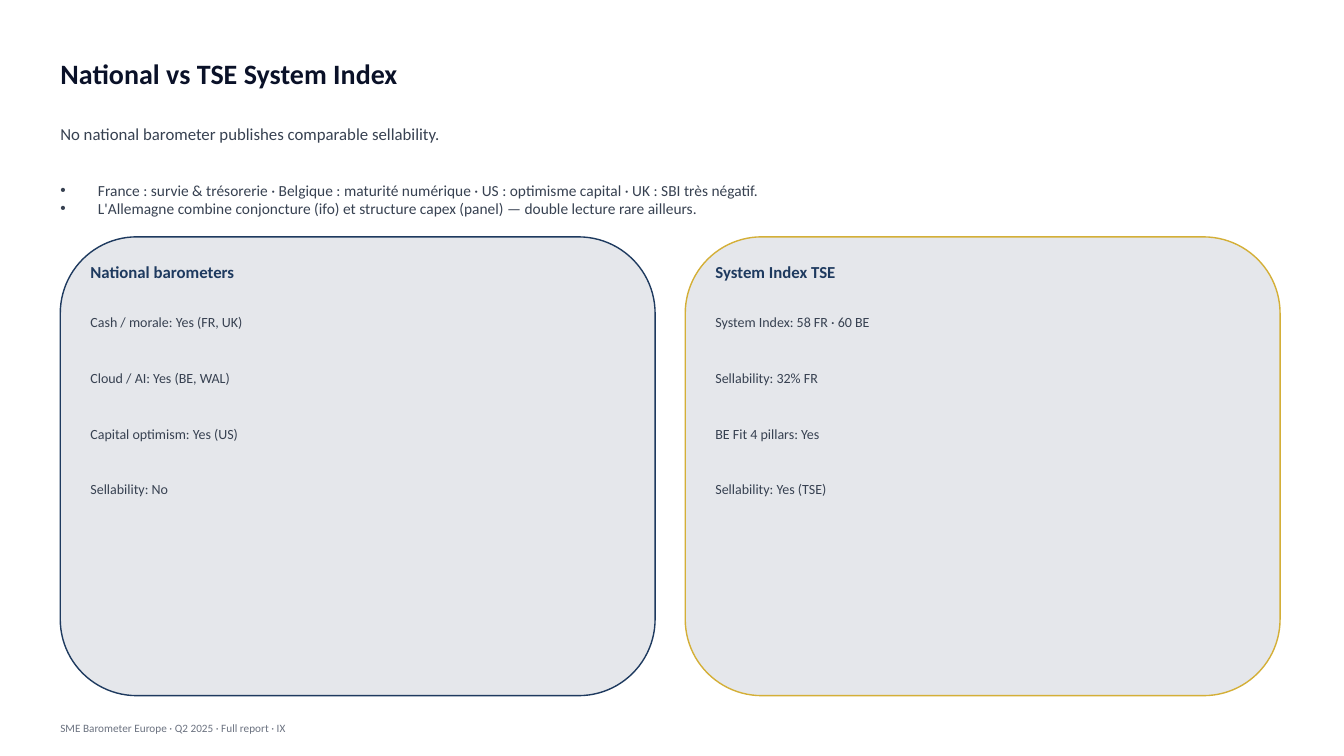
from lxml.etree import SubElement
from pptx import Presentation
from pptx.dml.color import RGBColor
from pptx.enum.shapes import MSO_SHAPE
from pptx.enum.text import MSO_ANCHOR, PP_ALIGN
from pptx.oxml.ns import qn
from pptx.util import Cm, Pt

INK, NAVY, GOLD = "0A1128", "1E3A5F", "D4AF37"
BODY, MUTED, PANEL = "374151", "6B7280", "E5E7EB"
LEFT, WIDE = 1.27, 31.24


def color(code):
    return RGBColor.from_string(code)


def write(text, left, top, width, height, size, tint=BODY, bold=False,
          bullet=False, box=None):
    """Write text, one paragraph a line, in a new text box or the given one."""
    if box is None:
        box = slide.shapes.add_textbox(0, 0, 0, 0)
    box.left, box.top = Cm(left), Cm(top)
    box.width, box.height = Cm(width), Cm(height)
    frame = box.text_frame
    frame.word_wrap = True
    frame.vertical_anchor = MSO_ANCHOR.MIDDLE
    frame.text = text
    for para in frame.paragraphs:
        para.alignment = PP_ALIGN.LEFT
        if bullet:
            props = para._p.get_or_add_pPr()
            props.set("marL", str(Cm(0.95)))
            props.set("indent", str(-Cm(0.95)))
            SubElement(props, qn("a:buFont"), typeface="Arial")
            SubElement(props, qn("a:buChar"), char="•")
        font = para.runs[0].font
        font.name, font.size, font.bold = "Calibri", Pt(size), bold
        font.color.rgb = color(tint)


deck = Presentation()
deck.slide_width, deck.slide_height = Cm(33.87), Cm(19.05)
slide = deck.slides.add_slide(deck.slide_layouts[5])

write("National vs TSE System Index", LEFT, 1.02, WIDE, 1.65, 20,
      tint=INK, bold=True, box=slide.shapes.title)
write("No national barometer publishes comparable sellability.",
      LEFT, 2.67, WIDE, 1.4, 12)
write("France : survie & trésorerie · Belgique : maturité numérique · "
      "US : optimisme capital · UK : SBI très négatif.\n"
      "L'Allemagne combine conjoncture (ifo) et structure capex (panel) — "
      "double lecture rare ailleurs.",
      LEFT, 3.94, WIDE, 2.16, 11, bullet=True)

cards = [
    ("National barometers", NAVY, [
        "Cash / morale: Yes (FR, UK)",
        "Cloud / AI: Yes (BE, WAL)",
        "Capital optimism: Yes (US)",
        "Sellability: No",
    ]),
    ("System Index TSE", GOLD, [
        "System Index: 58 FR · 60 BE",
        "Sellability: 32% FR",
        "BE Fit 4 pillars: Yes",
        "Sellability: Yes (TSE)",
    ]),
]
for col, (head, edge, items) in enumerate(cards):
    left = 1.52 + col * 15.75
    card = slide.shapes.add_shape(MSO_SHAPE.ROUNDED_RECTANGLE, Cm(left),
                                  Cm(5.97), Cm(14.99), Cm(11.56))
    card.shadow.inherit = False
    card.fill.solid()
    card.fill.fore_color.rgb = color(PANEL)
    card.line.color.rgb = color(edge)
    card.line.width = Pt(1)
    write(head, left + 0.51, 6.35, 13.97, 1.02, 12, tint=NAVY, bold=True)
    for row, item in enumerate(items):
        write(item, left + 0.51, 7.49 + row * 1.4, 13.97, 1.27, 10)

write("SME Barometer Europe · Q2 2025 · Full report · IX",
      LEFT, 17.91, WIDE, 0.89, 8, tint=MUTED)

deck.save("out.pptx")
